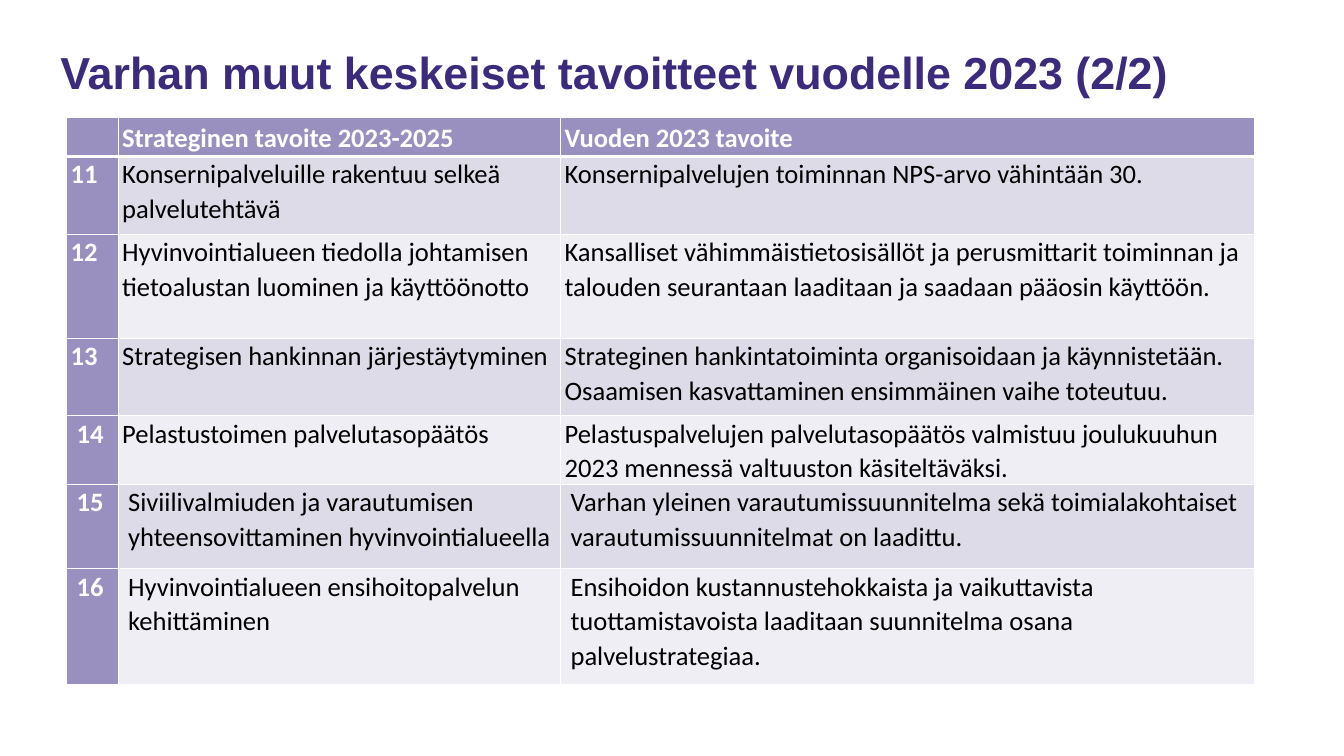
"""Build the slide of Varha's other key goals for 2023."""
from lxml import etree
from pptx import Presentation
from pptx.dml.color import RGBColor
from pptx.enum.text import MSO_ANCHOR
from pptx.oxml.ns import qn
from pptx.util import Cm, Pt

MIDDLE = MSO_ANCHOR.MIDDLE
TOP = MSO_ANCHOR.TOP

TITLE_PURPLE = RGBColor(0x3C, 0x2B, 0x7C)
HEADER_PURPLE = RGBColor(0x99, 0x90, 0xC0)
BAND_DARK = RGBColor(0xDE, 0xDB, 0xE8)
BAND_LIGHT = RGBColor(0xEF, 0xEE, 0xF4)
WHITE = RGBColor(0xFF, 0xFF, 0xFF)
BLACK = RGBColor(0x00, 0x00, 0x00)

NARROW_INSET = Cm(0.1)
WIDE_INSET = Cm(0.25)
COLUMN_WIDTHS = [Cm(1.3), Cm(11.15), Cm(17.48)]
ROW_HEIGHTS = [Cm(0.97), Cm(1.96), Cm(2.62), Cm(1.96), Cm(1.7), Cm(2.13), Cm(2.92)]

GOALS = [
    ("", "Strateginen tavoite 2023-2025", "Vuoden 2023 tavoite"),
    ("11", "Konsernipalveluille rakentuu selkeä palvelutehtävä",
     "Konsernipalvelujen toiminnan NPS-arvo vähintään 30."),
    ("12", "Hyvinvointialueen tiedolla johtamisen tietoalustan luominen ja käyttöönotto",
     "Kansalliset vähimmäistietosisällöt ja perusmittarit toiminnan ja "
     "talouden seurantaan laaditaan ja saadaan pääosin käyttöön."),
    ("13", "Strategisen hankinnan järjestäytyminen",
     "Strateginen hankintatoiminta organisoidaan ja käynnistetään. "
     "Osaamisen kasvattaminen ensimmäinen vaihe toteutuu."),
    ("14", "Pelastustoimen palvelutasopäätös",
     "Pelastuspalvelujen palvelutasopäätös valmistuu joulukuuhun "
     "2023 mennessä valtuuston käsiteltäväksi."),
    ("15", "Siviilivalmiuden ja varautumisen yhteensovittaminen hyvinvointialueella",
     "Varhan yleinen varautumissuunnitelma sekä toimialakohtaiset "
     "varautumissuunnitelmat on laadittu."),
    ("16", "Hyvinvointialueen ensihoitopalvelun kehittäminen",
     "Ensihoidon kustannustehokkaista ja vaikuttavista tuottamistavoista "
     "laaditaan suunnitelma osana palvelustrategiaa."),
]


def format_runs(paragraph, font_name, size, color, bold):
    """Apply one font to every run of a paragraph."""
    for run in paragraph.runs:
        run.font.name = font_name
        run.font.size = Pt(size)
        run.font.bold = bold
        run.font.color.rgb = color


def add_title(slide, text):
    """Add the slide title."""
    shape = slide.shapes.add_textbox(Cm(1.27), Cm(0.97), Cm(31.85), Cm(1.65))
    text_frame = shape.text_frame
    text_frame.word_wrap = True
    text_frame.vertical_anchor = MIDDLE
    text_frame.text = text
    format_runs(text_frame.paragraphs[0], "Arial", 32, TITLE_PURPLE, True)


def set_borders(cell, bottom_width):
    """Draw white borders, with a chosen width below the cell."""
    properties = cell._tc.get_or_add_tcPr()
    widths = {"a:lnL": 1, "a:lnR": 1, "a:lnT": 1, "a:lnB": bottom_width}
    for position, (tag, width) in enumerate(widths.items()):
        line = etree.Element(qn(tag), w=str(Pt(width)))
        fill = etree.SubElement(line, qn("a:solidFill"))
        etree.SubElement(fill, qn("a:srgbClr"), val=str(WHITE))
        properties.insert(position, line)


def fill_cell(cell, text, fill_color, is_heading, is_header_row, inset):
    """Write and style one table cell."""
    cell.fill.solid()
    cell.fill.fore_color.rgb = fill_color
    cell.margin_left = cell.margin_right = inset
    cell.margin_top = cell.margin_bottom = Cm(0)
    cell.vertical_anchor = MIDDLE if is_header_row else TOP
    cell.text_frame.text = text
    paragraph = cell.text_frame.paragraphs[0]
    paragraph.line_spacing = 1.07
    format_runs(paragraph, "Calibri", 19, WHITE if is_heading else BLACK, is_heading)
    set_borders(cell, 3 if is_header_row else 1)


def add_goal_table(slide):
    """Add the table of goals with a purple header row and first column."""
    frame = slide.shapes.add_table(
        len(GOALS), len(COLUMN_WIDTHS), Cm(1.68), Cm(2.97),
        sum(COLUMN_WIDTHS), sum(ROW_HEIGHTS))
    table = frame.table
    for column, width in zip(table.columns, COLUMN_WIDTHS):
        column.width = width
    for row, height in zip(table.rows, ROW_HEIGHTS):
        row.height = height
    for row_index, goal in enumerate(GOALS):
        band_color = BAND_DARK if row_index % 2 else BAND_LIGHT
        for column_index, text in enumerate(goal):
            is_heading = row_index == 0 or column_index == 0
            is_wide = goal[0] in ("15", "16") or text == "14"
            fill_cell(table.cell(row_index, column_index), text,
                      HEADER_PURPLE if is_heading else band_color,
                      is_heading, row_index == 0,
                      WIDE_INSET if is_wide else NARROW_INSET)


def main():
    """Create the presentation and save it."""
    presentation = Presentation()
    presentation.slide_width = Cm(33.87)
    presentation.slide_height = Cm(19.05)
    slide = presentation.slides.add_slide(presentation.slide_layouts[6])
    add_title(slide, "Varhan muut keskeiset tavoitteet vuodelle 2023 (2/2)")
    add_goal_table(slide)
    presentation.save("out.pptx")


if __name__ == "__main__":
    main()
